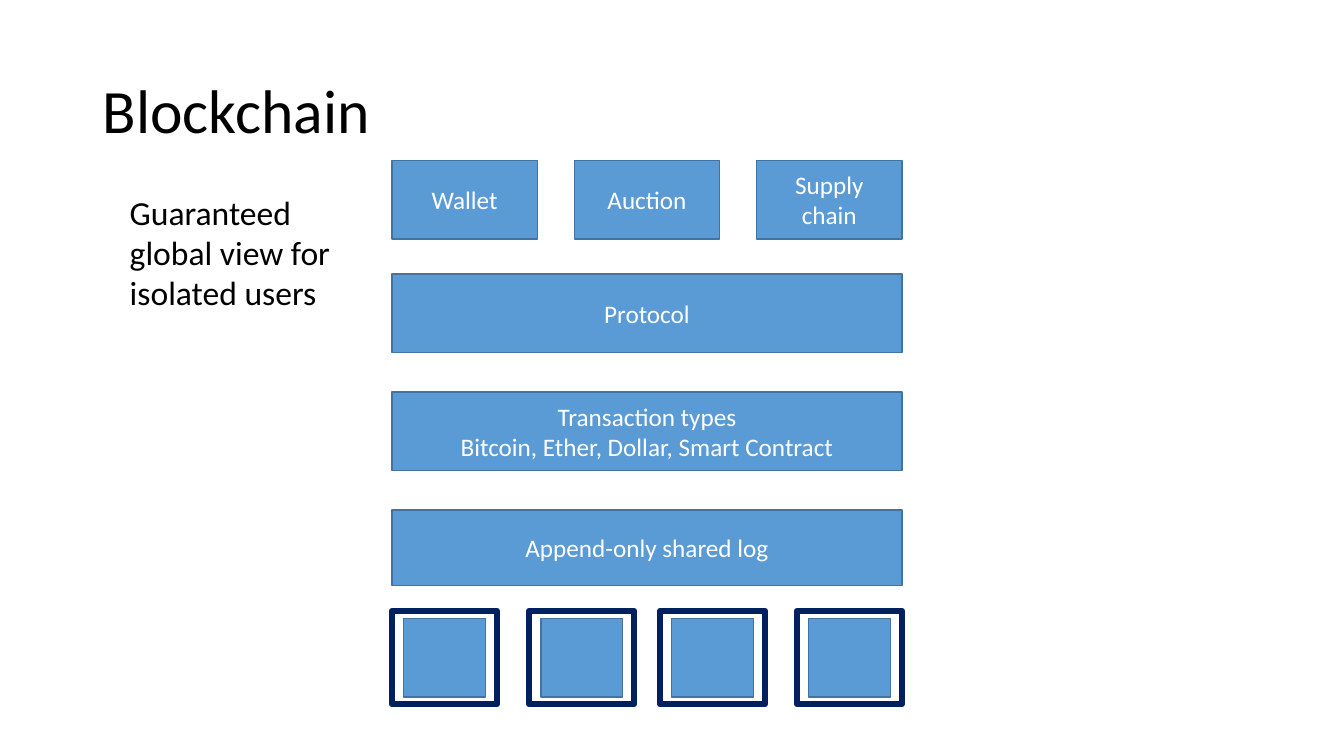
"""Build the Blockchain layer diagram slide."""
import pptx
import pptx.dml.color
import pptx.enum.shapes
import pptx.enum.text
import pptx.util

TITLE = "Blockchain"
NOTE = "Guaranteed global view for isolated users"
APPS = ["Wallet", "Auction", "Supply chain"]
LAYERS = [
    (6.91, 1.98, ["Protocol"]),
    (9.88, 1.98, ["Transaction types", "Bitcoin, Ether, Dollar, Smart Contract"]),
    (12.85, 1.9, ["Append-only shared log"]),
]
NODE_LEFTS = [9.88, 13.34, 16.64, 20.09]

STACK_LEFT, STACK_WIDTH = 9.88, 12.85
APP_TOP, APP_WIDTH, APP_HEIGHT = 4.04, 3.66, 1.98
NODE_TOP, NODE_WIDTH, NODE_HEIGHT = 15.39, 2.64, 2.36
CORE_WIDTH, CORE_HEIGHT, CORE_DROP = 2.06, 1.98, 0.2
FONT = "Calibri"
BLACK, WHITE, BLUE, EDGE, NAVY = "000000", "FFFFFF", "5B9BD5", "43739E", "002060"

Cm = pptx.util.Cm
Pt = pptx.util.Pt
Align = pptx.enum.text.PP_ALIGN
Anchor = pptx.enum.text.MSO_ANCHOR


def color(value):
    return pptx.dml.color.RGBColor.from_string(value)


def write(box, lines, size, ink, align, anchor, spacing=1.0):
    frame = box.text_frame
    frame.word_wrap = True
    frame.vertical_anchor = anchor
    for index, line in enumerate(lines):
        para = frame.add_paragraph() if index else frame.paragraphs[0]
        para.alignment = align
        para.line_spacing = spacing
        span = para.add_run()
        span.text = line
        span.font.name = FONT
        span.font.size = Pt(size)
        span.font.color.rgb = color(ink)


def add_label(page, area, text, size, anchor, spacing=1.0):
    box = page.shapes.add_textbox(*map(Cm, area))
    write(box, [text], size, BLACK, Align.LEFT, anchor, spacing)


def add_box(shapes, area, fill, edge, weight, lines=()):
    kind = pptx.enum.shapes.MSO_SHAPE.RECTANGLE
    box = shapes.add_shape(kind, *map(Cm, area))
    box.shadow.inherit = False
    if fill:
        box.fill.solid()
        box.fill.fore_color.rgb = color(fill)
    else:
        box.fill.background()
    box.line.color.rgb = color(edge)
    box.line.width = Pt(weight)
    write(box, lines, 18, WHITE, Align.CENTER, Anchor.MIDDLE)


def add_node(page, left):
    node = page.shapes.add_group_shape()
    inset = (NODE_WIDTH - CORE_WIDTH) / 2
    core = (left + inset, NODE_TOP + CORE_DROP, CORE_WIDTH, CORE_HEIGHT)
    add_box(node.shapes, core, BLUE, EDGE, 1)
    add_box(node.shapes, (left, NODE_TOP, NODE_WIDTH, NODE_HEIGHT), None, NAVY, 4.5)


def main():
    deck = pptx.Presentation()
    deck.slide_width, deck.slide_height = Cm(33.87), Cm(19.05)
    page = deck.slides.add_slide(deck.slide_layouts[6])

    add_label(page, (2.34, 1.02, 29.21, 3.68), TITLE, 44, Anchor.MIDDLE, 0.9)
    add_label(page, (3.02, 4.7, 6.17, 3.33), NOTE, 24, Anchor.TOP)

    step = (STACK_WIDTH - APP_WIDTH) / (len(APPS) - 1)
    for index, app in enumerate(APPS):
        area = (STACK_LEFT + index * step, APP_TOP, APP_WIDTH, APP_HEIGHT)
        add_box(page.shapes, area, BLUE, EDGE, 1, [app])
    for top, height, lines in LAYERS:
        area = (STACK_LEFT, top, STACK_WIDTH, height)
        add_box(page.shapes, area, BLUE, EDGE, 1, lines)
    for left in NODE_LEFTS:
        add_node(page, left)

    deck.save("out.pptx")


if __name__ == "__main__":
    main()
